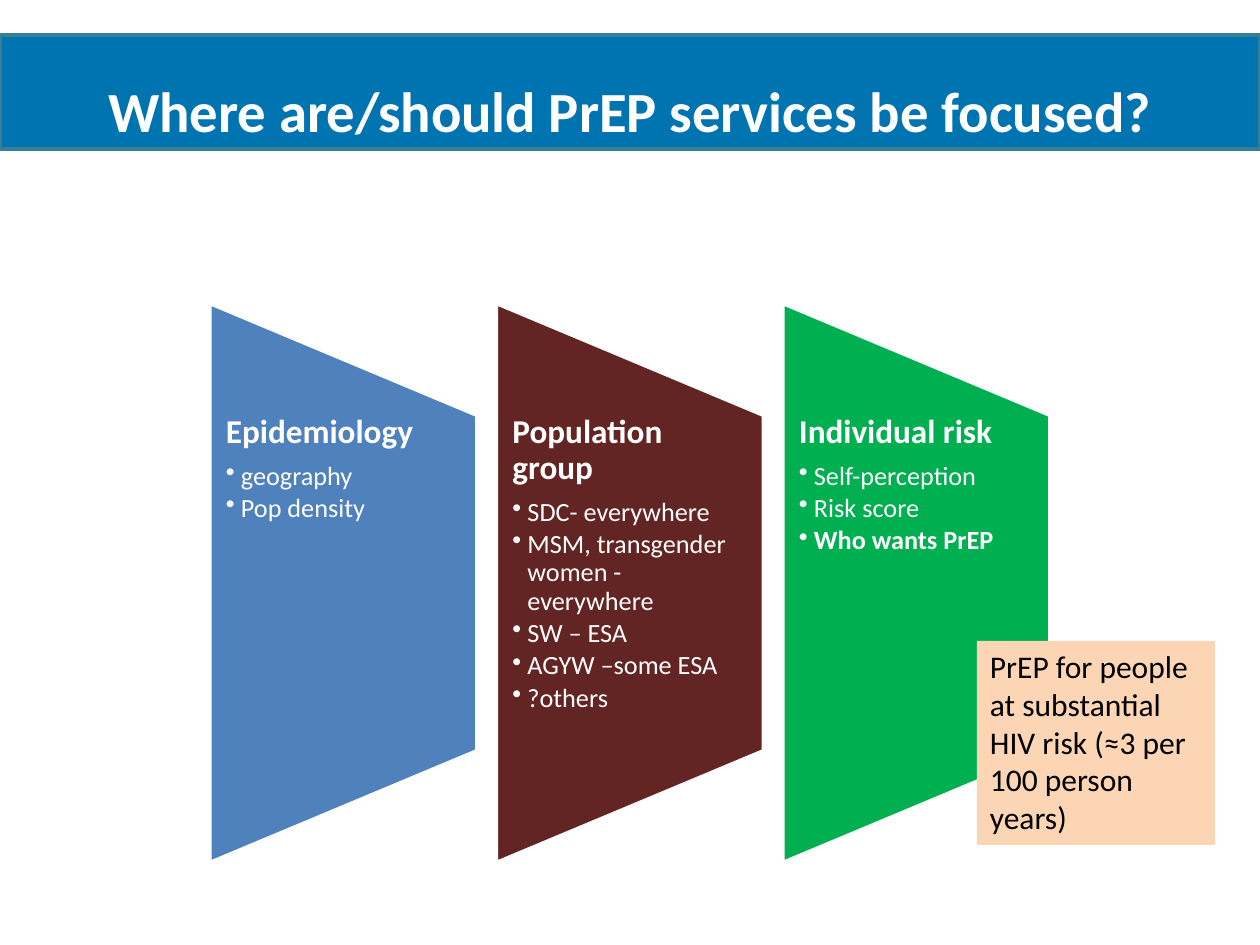
import pptx
import pptx.util
import pptx.dml.color
import pptx.enum.shapes
import pptx.enum.text
from lxml import etree

TITLE = "Where are/should PrEP services be focused?"
PANELS = [
    ("Epidemiology", "4F81BD", ["geography", "Pop density"]),
    ("Population group", "632523",
     ["SDC- everywhere", "MSM, transgender women - everywhere", "SW – ESA",
      "AGYW –some ESA", "?others"]),
    ("Individual risk", "00B050",
     ["Self-perception", "Risk score", "Who wants PrEP"]),
]
BOLD_ITEMS = {"Who wants PrEP"}
NOTE = "PrEP for people at substantial HIV risk (≈3 per 100 person years)"

# Panel layout in px
PANEL_LEFT, PANEL_PITCH, PANEL_W, PANEL_H = 210, 286.5, 267, 559
PANEL_MID_Y, TEXT_TOP, TEXT_H = 583, 415, 336

SHAPE = pptx.enum.shapes.MSO_SHAPE
ANCHOR = pptx.enum.text.MSO_ANCHOR
ALIGN = pptx.enum.text.PP_ALIGN
Pt = pptx.util.Pt


def px(n):
    return pptx.util.Emu(round(n * 914400 / 126))


def rgb(value):
    return pptx.dml.color.RGBColor.from_string(value)


def place(shape, x, y, w, h):
    shape.left, shape.top, shape.width, shape.height = map(px, (x, y, w, h))


def paint(shape, fill, line=None):
    shape.fill.solid()
    shape.fill.fore_color.rgb = rgb(fill)
    if line:
        shape.line.color.rgb = rgb(line)
        shape.line.width = Pt(2)
    else:
        shape.line.fill.background()


def frame(shape, anchor, left, top, right, bottom):
    tf = shape.text_frame
    settings = {"word_wrap": True, "vertical_anchor": anchor,
                "auto_size": pptx.enum.text.MSO_AUTO_SIZE.NONE,
                "margin_left": px(left), "margin_top": px(top),
                "margin_right": px(right), "margin_bottom": px(bottom)}
    for name, value in settings.items():
        setattr(tf, name, value)
    return tf


def write(p, text, size, color, bold=False, **para):
    r = p.add_run()
    r.text = text
    for name, value in {"name": "Calibri", "size": Pt(size), "bold": bold}.items():
        setattr(r.font, name, value)
    r.font.color.rgb = rgb(color)
    for name, value in para.items():
        setattr(p, name, value)


def add_bullet(p):
    pPr = p._p.get_or_add_pPr()
    pPr.set("marL", str(px(15)))
    pPr.set("indent", str(-px(15)))
    bullet = etree.SubElement(pPr, pptx.oxml.ns.qn("a:buChar"))
    bullet.set("char", "•")


prs = pptx.Presentation()
prs.slide_width, prs.slide_height = px(1260), px(945)
s = prs.slides.add_slide(prs.slide_layouts[5])

# Title band
title = s.shapes.title
place(title, 0, 35, 1260, 114)
paint(title, "0073B1", "377F92")
tf = frame(title, ANCHOR.MIDDLE, 13, 42, 13, 6)
write(tf.paragraphs[0], TITLE, 32.4, "FFFFFF", True, alignment=ALIGN.CENTER)

# Panels: a trapezoid turned on its side, with text on top
group = s.shapes.add_group_shape()
for i, (heading, color, items) in enumerate(PANELS):
    x = PANEL_LEFT + i * PANEL_PITCH
    panel = group.shapes.add_shape(SHAPE.FLOWCHART_MANUAL_OPERATION, 0, 0, 0, 0)
    place(panel, x + (PANEL_W - PANEL_H) / 2, PANEL_MID_Y - PANEL_W / 2,
          PANEL_H, PANEL_W)
    panel.rotation = 270
    panel.shadow.inherit = False
    paint(panel, color, "FFFFFF")

    box = group.shapes.add_textbox(px(x), px(TEXT_TOP), px(PANEL_W), px(TEXT_H))
    tf = frame(box, ANCHOR.TOP, 16, 0, 18, 0)
    write(tf.paragraphs[0], heading, 19, "FFFFFF", True,
          line_spacing=0.9, space_after=Pt(6.65))
    for item in items:
        p = tf.add_paragraph()
        write(p, item, 15, "FFFFFF", item in BOLD_ITEMS,
              level=1, line_spacing=0.9, space_after=Pt(2.25))
        add_bullet(p)

# Note
note = s.shapes.add_shape(SHAPE.RECTANGLE, 0, 0, 0, 0)
place(note, 977, 641, 238, 204)
note.shadow.inherit = False
paint(note, "FCD5B5")
tf = frame(note, ANCHOR.TOP, 13, 6, 13, 6)
write(tf.paragraphs[0], NOTE, 18, "000000", alignment=ALIGN.LEFT)

prs.save("out.pptx")
